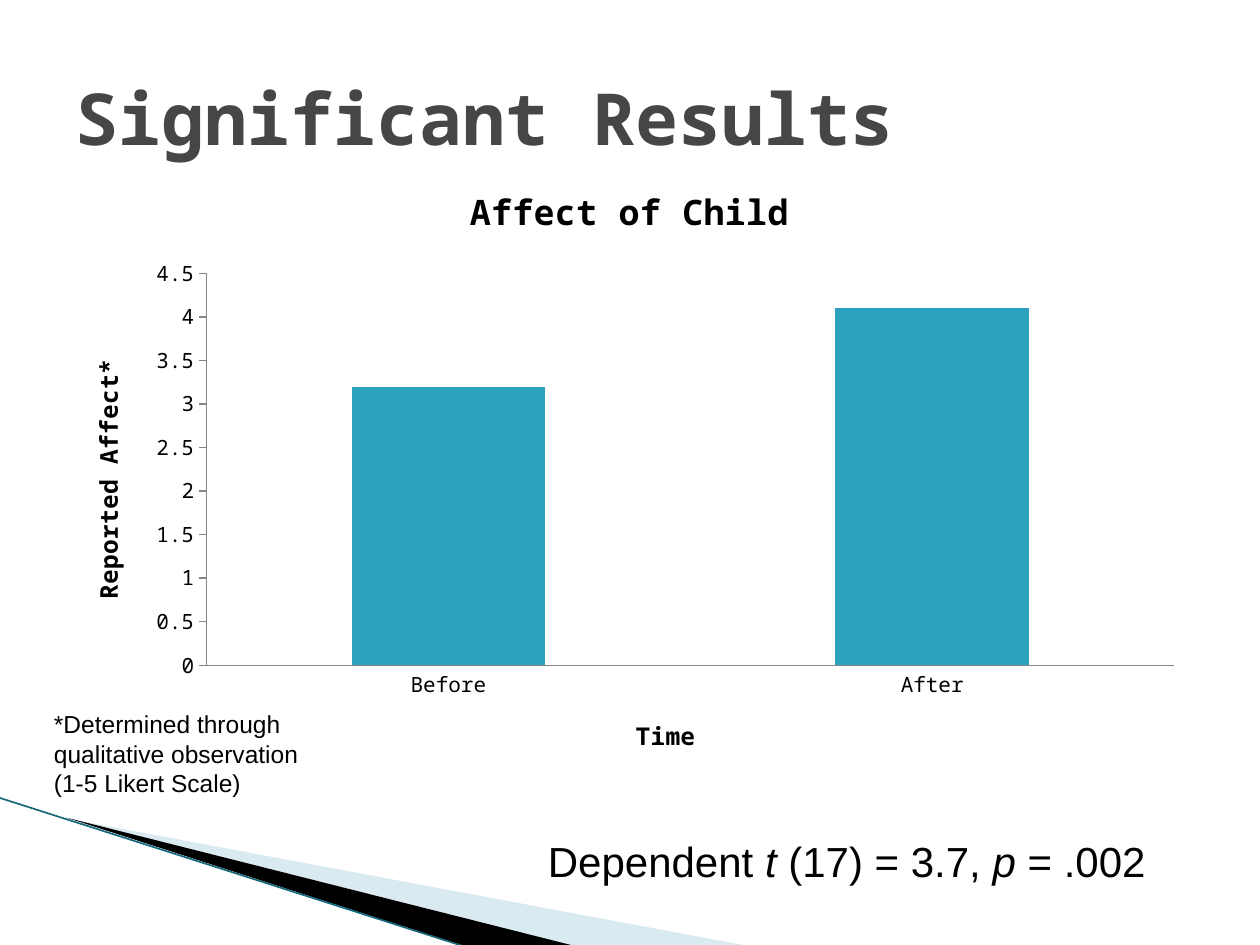
from dataclasses import dataclass

import pptx
import pptx.chart.data
import pptx.dml.color
import pptx.enum.chart
import pptx.enum.shapes
import pptx.enum.text
import pptx.oxml
import pptx.oxml.ns
import pptx.util
from pptx.util import Inches, Pt


@dataclass(frozen=True)
class Theme:
    heading_font: str = "Noto Sans Mono"
    body_font: str = "Arial"
    heading: str = "464646"
    text: str = "000000"
    bar: str = "2DA2BF"
    axis: str = "868686"
    pale: str = "A0CBDC"
    edge: str = "16697D"
    title_size: int = 41
    chart_title_size: int = 20
    axis_title_size: int = 14
    tick_size: int = 12
    note_size: int = 14
    result_size: int = 24


THEME = Theme()


def rgb(color):
    return pptx.dml.color.RGBColor.from_string(color)


def style(font, size, name, color=THEME.text, bold=False):
    font.size, font.name, font.bold = Pt(size), name, bold
    font.color.rgb = rgb(color)


def add_wedge(slide, points, color, alpha=None):
    """Fill the outline through points (inches); alpha is a percentage."""
    start, *rest = [(Inches(px), Inches(py)) for px, py in points]
    builder = slide.shapes.build_freeform(*start)
    builder.add_line_segments(rest, close=True)
    sp = builder.convert_to_shape()
    sp.shadow.inherit = False
    sp.fill.solid()
    sp.fill.fore_color.rgb = rgb(color)
    sp.line.fill.background()
    if alpha is not None:
        clr = sp.fill._xPr.find(".//" + pptx.oxml.ns.qn("a:srgbClr"))
        clr.append(pptx.oxml.parse_xml(
            f'<a:alpha {pptx.oxml.ns.nsdecls("a")} val="{alpha * 1000}"/>'))


def add_corner(slide, x, y):
    """Draw the corner wedges with their common tip at x, y."""
    add_wedge(slide, [(x, y), (x + 5.4, y + 1.01), (x + 4.01, y + 1.01)],
              THEME.pale, alpha=40)
    add_wedge(slide, [(x - 0.02, y - 0.01), (x + 4.02, y + 1.01),
                      (x + 3.17, y + 1.02)], THEME.text)
    line = slide.shapes.add_connector(
        pptx.enum.shapes.MSO_CONNECTOR.STRAIGHT,
        Inches(x - 0.56), Inches(y - 0.17), Inches(x + 3.16), Inches(y + 1.02))
    line.line.color.rgb = rgb(THEME.edge)
    line.line.width = Pt(0.95)
    line._element.spPr.append(pptx.oxml.parse_xml(
        f'<a:effectLst {pptx.oxml.ns.nsdecls("a")}/>'))


def add_title(slide, text, x, y, w, h):
    sp = slide.shapes.title
    sp.left, sp.top, sp.width, sp.height = map(Inches, (x, y, w, h))
    tf = sp.text_frame
    tf.text = text
    tf.vertical_anchor = pptx.enum.text.MSO_ANCHOR.MIDDLE
    p = tf.paragraphs[0]
    p.alignment = pptx.enum.text.PP_ALIGN.LEFT
    style(p.font, THEME.title_size, THEME.heading_font, THEME.heading, True)


def set_layout(element, index, chart_size, **inches):
    """Place a chart part by x, y (and w, h) in inches within the chart."""
    for old in element.findall(pptx.oxml.ns.qn("c:layout")):
        element.remove(old)
    width, height = chart_size
    target = '<c:layoutTarget val="inner"/>' if "w" in inches else ""
    modes = "".join(f'<c:{k}Mode val="edge"/>' for k in inches if k in "xy")
    values = "".join(f'<c:{k} val="{v / (width if k in "xw" else height)}"/>'
                     for k, v in inches.items())
    element.insert(index, pptx.oxml.parse_xml(
        f'<c:layout {pptx.oxml.ns.nsdecls("c")}><c:manualLayout>'
        f'{target}{modes}{values}</c:manualLayout></c:layout>'))


def set_chart_title(title, text, size, chart_size, x, y):
    title.text_frame.text = text
    style(title.text_frame.paragraphs[0].font, size, THEME.heading_font, bold=True)
    set_layout(title._element, 1, chart_size, x=x, y=y)


def add_affect_chart(slide, x, y, w, h):
    enums = pptx.enum.chart
    data = pptx.chart.data.CategoryChartData()
    data.categories = ["Before", "After"]
    data.add_series("Series 1", [3.2, 4.1])
    chart = slide.shapes.add_chart(
        enums.XL_CHART_TYPE.COLUMN_CLUSTERED,
        *map(Inches, (x, y, w, h)), data).chart
    style(chart.font, THEME.tick_size, THEME.heading_font)
    chart.has_legend = False
    chart.has_title = True
    set_chart_title(chart.chart_title, "Affect of Child",
                    THEME.chart_title_size, (w, h), 3.18, 0.15)

    plot = chart.plots[0]
    plot.vary_by_categories = False
    plot.gap_width = 150
    fill = plot.series[0].format.fill
    fill.solid()
    fill.fore_color.rgb = rgb(THEME.bar)

    value, category = chart.value_axis, chart.category_axis
    for axis, text, tx, ty, tick in (
            (value, "Reported Affect*", 0.17, 1.57, enums.XL_TICK_MARK.OUTSIDE),
            (category, "Time", 4.51, 4.4, enums.XL_TICK_MARK.NONE)):
        axis.has_major_gridlines = False
        axis.major_tick_mark = tick
        axis.minor_tick_mark = enums.XL_TICK_MARK.NONE
        axis.format.line.color.rgb = rgb(THEME.axis)
        axis.format.line.width = Pt(0.75)
        style(axis.tick_labels.font, THEME.tick_size, THEME.heading_font)
        set_chart_title(axis.axis_title, text, THEME.axis_title_size,
                        (w, h), tx, ty)
    value.minimum_scale, value.maximum_scale, value.major_unit = 0, 4.5, 0.5
    value.tick_labels.number_format = "General"
    value.tick_labels.number_format_is_linked = False
    set_layout(chart._chartSpace.chart.plotArea, 0, (w, h),
               x=1.14, y=0.92, w=7.68, h=3.11)


def add_text(slide, runs, size, x, y, w, h):
    """Add one paragraph made of (text, italic) runs."""
    tf = slide.shapes.add_textbox(*map(Inches, (x, y, w, h))).text_frame
    tf.word_wrap = True
    p = tf.paragraphs[0]
    style(p.font, size, THEME.body_font)
    for text, italic in runs:
        r = p.add_run()
        r.text = text
        if italic:
            r.font.italic = True


def main():
    prs = pptx.Presentation()
    prs.slide_width, prs.slide_height = Inches(10), Inches(7.5)
    slide = prs.slides.add_slide(prs.slide_layouts.get_by_name("Title Only"))
    add_corner(slide, 0.55, 6.5)
    add_title(slide, "Significant Results", 0.5, 0.3, 9, 1.25)
    add_affect_chart(slide, 0.5, 1.25, 9, 4.95)
    add_text(slide, [("*Determined through qualitative observation "
                      "(1-5 Likert Scale)", False)],
             THEME.note_size, 0.33, 5.58, 2.33, 0.81)
    add_text(slide, [("Dependent ", False), ("t ", True), ("(17) = 3.7, ", False),
                     ("p ", True), ("= .002", False)],
             THEME.result_size, 4.25, 6.58, 5.33, 0.5)
    prs.save("out.pptx")


if __name__ == "__main__":
    main()
